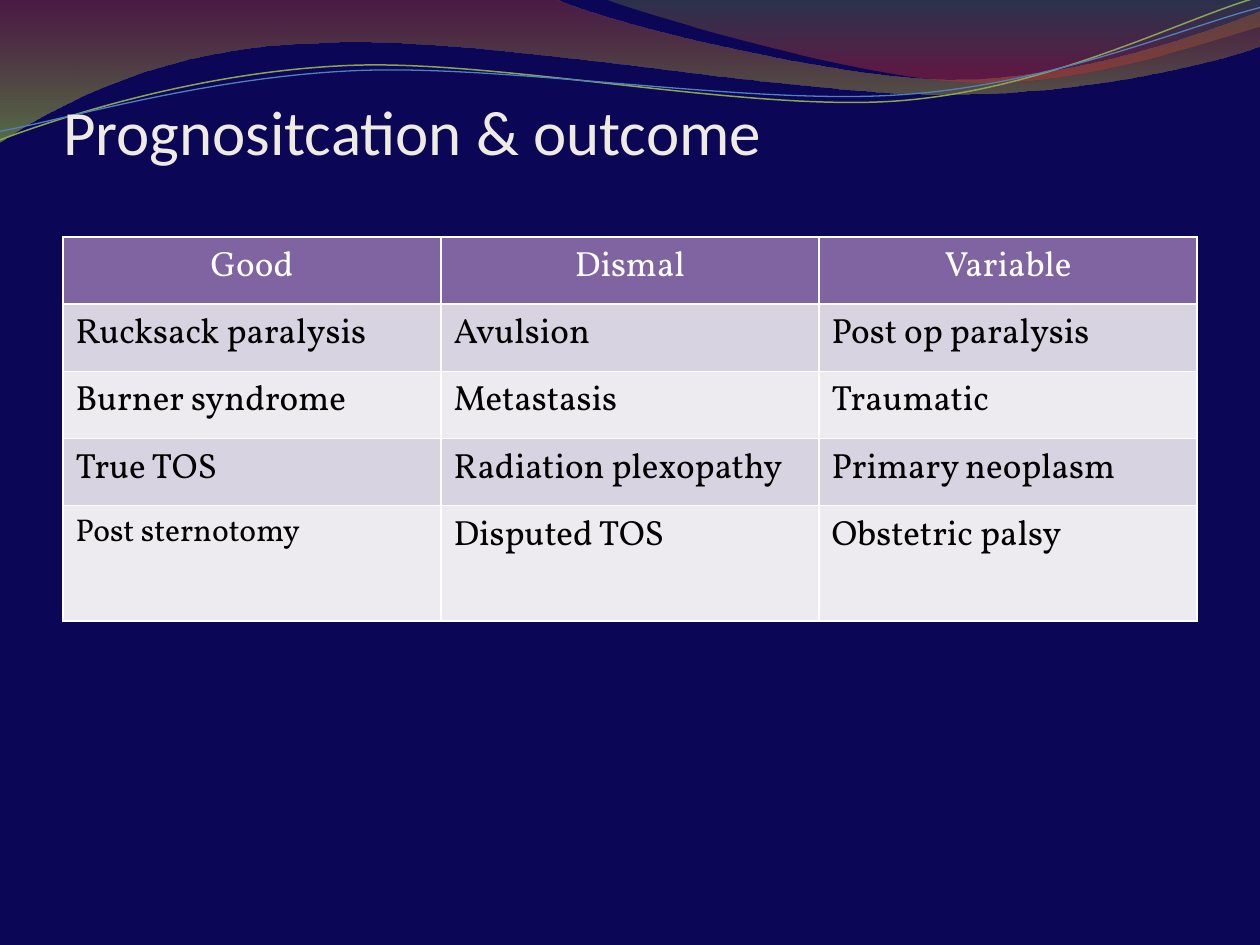
from pptx import Presentation
from pptx.util import Pt
from pptx.dml.color import RGBColor as RGB
from pptx.enum.text import MSO_ANCHOR as Anchor, PP_ALIGN as Align
from pptx.oxml.ns import qn
from lxml.etree import SubElement as Sub

NAVY = RGB(0x0C, 0x06, 0x56)
CREAM = RGB(0xEE, 0xEC, 0xE1)
WHITE = RGB(0xFF, 0xFF, 0xFF)
BLACK = RGB(0, 0, 0)
PURPLE = RGB(0x80, 0x64, 0xA2)
LILAC = RGB(0xD8, 0xD3, 0xE0)
PALE = RGB(0xED, 0xEA, 0xF0)
BRICK = RGB(0x97, 0x33, 0x30)
LIME = RGB(0x95, 0xC2, 0x38)
MOSS = RGB(0x76, 0x95, 0x37)
RED = RGB(0xBE, 0x33, 0x30)
OLIVE = RGB(0x89, 0xA5, 0x4F)
BLUE = RGB(0x4F, 0x81, 0xBD)

UNIT = 100  # freeform units per point

deck = Presentation()
deck.slide_width, deck.slide_height = Pt(720), Pt(540)
slide = deck.slides.add_slide(deck.slide_layouts[6])
slide.background.fill.solid()
slide.background.fill.fore_color.rgb = NAVY


def draw(start, parts, close):
    """Outline in points: a part is a line end or three Bezier points."""
    nums = [n * UNIT for part in (start, *parts) for n in part]
    dots = list(zip(nums[::2], nums[1::2]))
    pen = slide.shapes.build_freeform(*dots[0], scale=Pt(1) / UNIT)
    pen.add_line_segments(dots[1:], close=close)
    shape = pen.convert_to_shape()
    shape.shadow.inherit = False
    # Join each three line ends of a curve into one Bezier step
    route = next(shape._element.iter(qn("a:path")))
    steps = iter(route.findall(qn("a:lnTo")))
    for part in parts:
        step = next(steps)
        if len(part) == 6:
            step.tag = qn("a:cubicBezTo")
            for _ in range(2):
                spare = next(steps)
                step.append(spare[0])
                route.remove(spare)
    return shape


# Shaded bands: start, parts, stops (place, colour, opacity in percent)
bands = [
    ((0, 0),
     [(316.8, -0.7),
      (342.7, 12.2, 478.1, 45.4, 545.8, 45.4),
      (614.2, 45.4, 689.8, 18.7, 720, 6.5),
      (720.7, 25.9),
      (707.8, 31.7, 626.4, 54.7, 537.1, 54),
      (447.8, 54, 275, 20.2, 185, 24.5),
      (92.9, 25.9, 33.1, 59.8, -0.7, 81.4),
      (0, 0)],
     [(0, BRICK, 45), (1, LIME, 55)]),
    ((344.9, -0.7),
     [(366.5, 7.9, 491, 44.6, 553.7, 46.8),
      (616.3, 49.7, 691.9, 23, 720, 15.1),
      (720, 0),
      (344.9, -0.7)],
     [(0, MOSS, 30), (0.8, RED, 45)]),
]
for start, parts, stops in bands:
    band = draw(start, parts, True)
    band.line.fill.background()
    band.fill.gradient()
    band.fill.gradient_angle = 270
    for stop, (place, color, _) in zip(band.fill.gradient_stops, stops):
        stop.position = place
        stop.color.rgb = color
    tags = band._element.spPr.iter(qn("a:srgbClr"))
    for tag, (_, _, alpha) in zip(list(tags), stops):
        Sub(tag, qn("a:alpha"), val=str(alpha * 1000))

# Thin waves, slightly turned: start, parts, colour, width
waves = [
    ((-1.4, 63),
     [(33.8, 51.7, 114.1, 29.4, 199.8, 29.9),
      (284.8, 30.3, 425.8, 67.3, 512.4, 64.9),
      (599, 62.4, 676.5, 25.7, 720.2, 15.5)], OLIVE, 0.85),
    ((-1.1, 58),
     [(32.9, 53.8, 118.3, 32.5, 204.1, 33),
      (290.6, 33.4, 428.9, 63.8, 515.5, 61.4),
      (601.3, 59.6, 678.5, 30.1, 721.4, 21.3)], BLUE, 0.75),
]
for start, parts, color, width in waves:
    wave = draw(start, parts, False)
    wave.rotation = 357.3
    wave.fill.background()
    wave.line.color.rgb = color
    wave.line.width = Pt(width)


def write(frame, text, font, size, color):
    para = frame.paragraphs[0]
    run = para.add_run()
    run.text = text
    run.font.name = font
    run.font.size = Pt(size)
    run.font.bold = False
    run.font.color.rgb = color
    return para


# Title
box = slide.shapes.add_textbox(Pt(36), Pt(9.4), Pt(594), Pt(86.4))
frame = box.text_frame
frame.word_wrap = True
frame.vertical_anchor = Anchor.BOTTOM
frame.margin_left = frame.margin_right = frame.margin_bottom = 0
frame.margin_top = Pt(3.6)
write(frame, "Prognositcation & outcome", "Calibri", 36, CREAM)

# Outcome table
rows = [
    ("Good", "Dismal", "Variable"),
    ("Rucksack paralysis", "Avulsion", "Post op paralysis"),
    ("Burner syndrome", "Metastasis", "Traumatic"),
    ("True TOS", "Radiation plexopathy", "Primary neoplasm"),
    ("Post sternotomy", "Disputed TOS", "Obstetric palsy"),
]
table = slide.shapes.add_table(
    len(rows), 3, Pt(36), Pt(135.4), Pt(648), Pt(219.6)).table
table.horz_banding = False
for r, texts in enumerate(rows):
    head = r == 0
    table.rows[r].height = Pt(66 if r == len(rows) - 1 else 38.4)
    for c, text in enumerate(texts):
        cell = table.cell(r, c)
        size = 18 if text == "Post sternotomy" else 20
        para = write(cell.text_frame, text, "Vollkorn", size,
                     WHITE if head else BLACK)
        para.alignment = Align.CENTER if head else Align.LEFT
        # Borders come before the fill in the cell's XML
        props = cell._tc.get_or_add_tcPr()
        for side in ("lnL", "lnR", "lnT", "lnB"):
            edge = Sub(props, qn("a:" + side), w=str(Pt(1)))
            fill = Sub(edge, qn("a:solidFill"))
            Sub(fill, qn("a:srgbClr"), val=str(WHITE))
        cell.fill.solid()
        cell.fill.fore_color.rgb = PURPLE if head else LILAC if r % 2 else PALE

deck.save("out.pptx")
